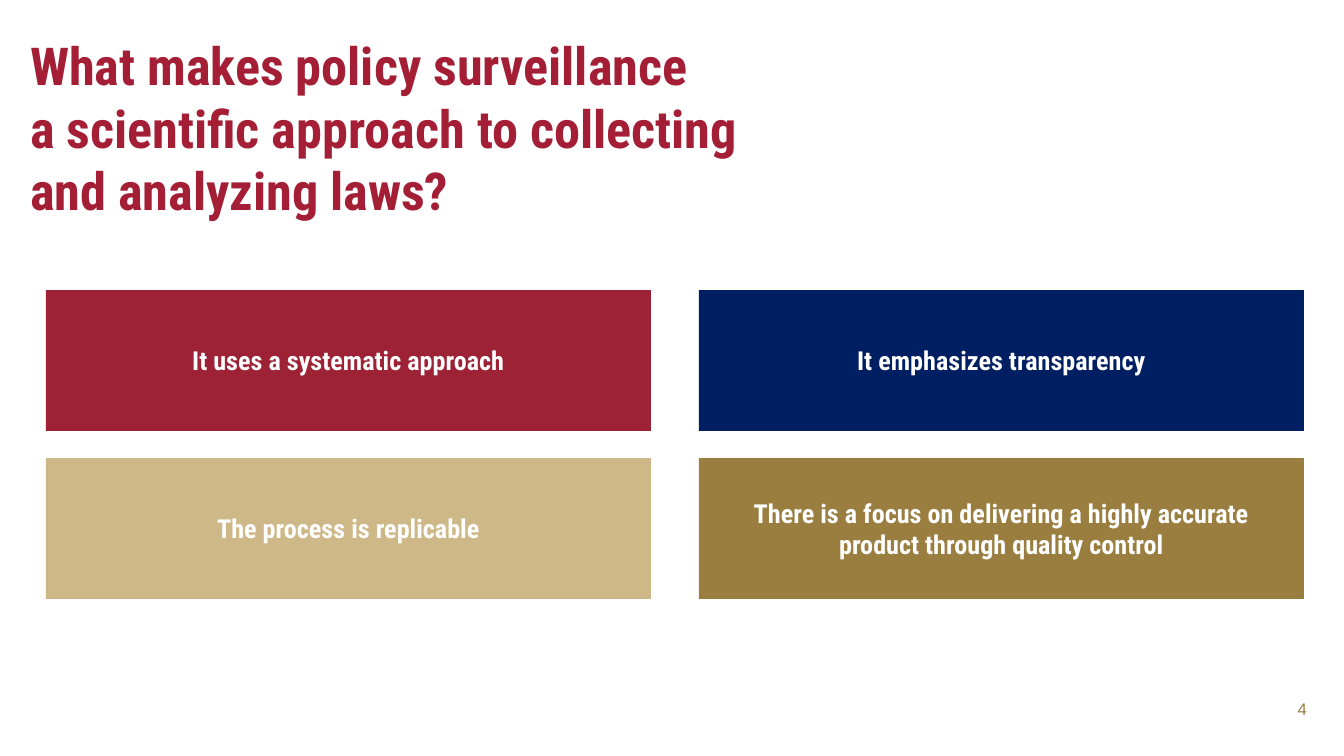
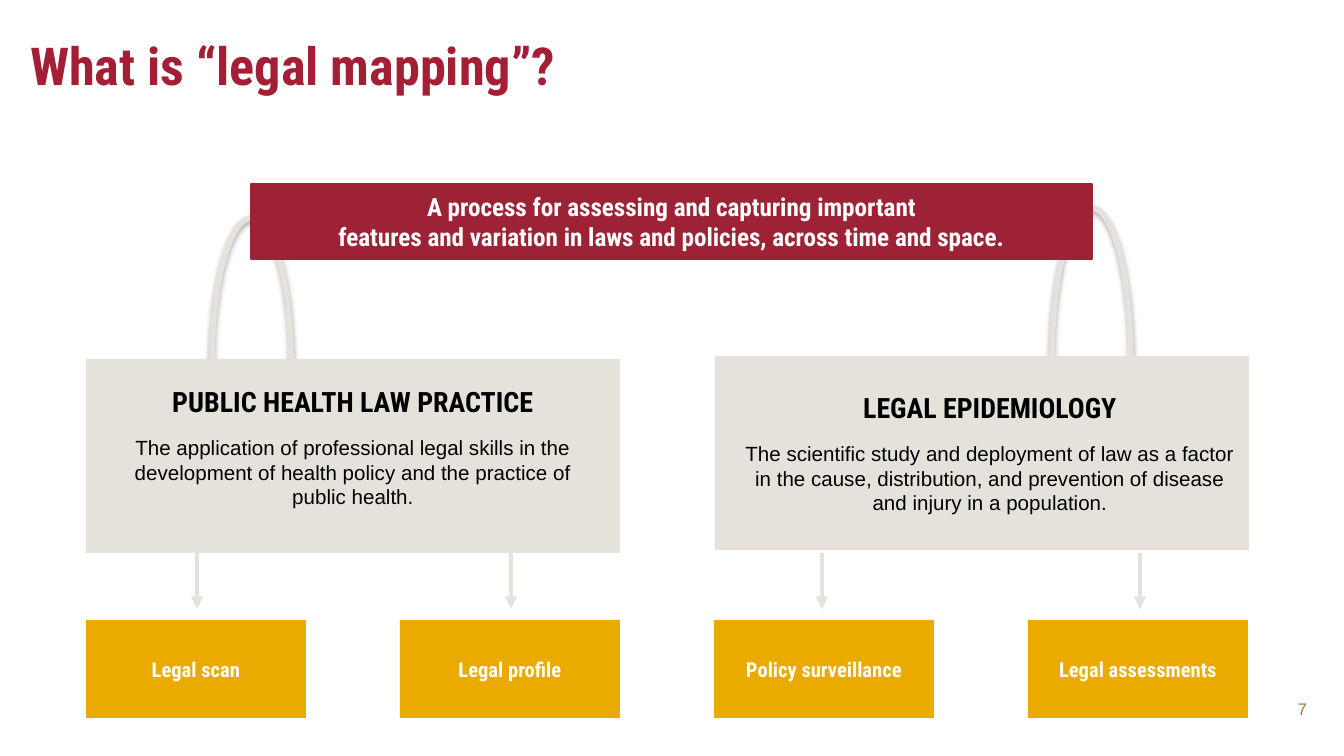
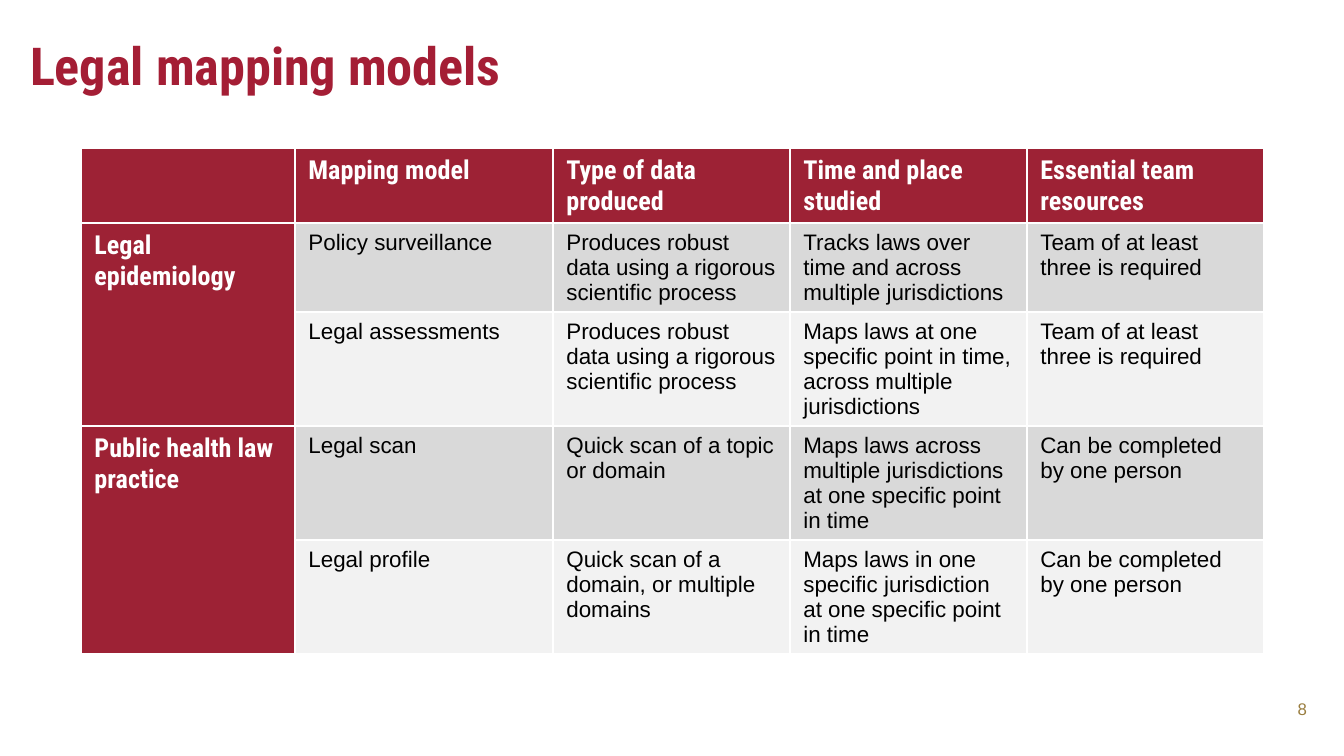
from copy import deepcopy

from pptx import Presentation
from pptx import util as u
from pptx.dml.color import RGBColor
from pptx.enum import shapes, text
from pptx.oxml import parse_xml
from pptx.oxml.ns import nsdecls, qn

PX = 914400 / 134.4
SLIDE_W, SLIDE_H = 1344, 756

WHITE = RGBColor(0xFF, 0xFF, 0xFF)
BLACK = RGBColor(0x00, 0x00, 0x00)
TITLE_RED = RGBColor(0xA4, 0x1E, 0x35)
CRIMSON = RGBColor(0x9D, 0x22, 0x35)
NAVY = RGBColor(0x00, 0x1E, 0x62)
SAND = RGBColor(0xCE, 0xB8, 0x88)
BRONZE = RGBColor(0x9A, 0x7E, 0x40)
AMBER = RGBColor(0xEA, 0xAA, 0x00)
STONE = RGBColor(0xE4, 0xE2, 0xDB)
ROW_DARK = RGBColor(0xD9, 0xD9, 0xD9)
ROW_LIGHT = RGBColor(0xF2, 0xF2, 0xF2)

HEAD_FONT = "Roboto Condensed"
BODY_FONT = "Arial"
LEFT, CENTER, RIGHT = text.PP_ALIGN.LEFT, text.PP_ALIGN.CENTER, text.PP_ALIGN.RIGHT
TOP, MIDDLE = text.MSO_ANCHOR.TOP, text.MSO_ANCHOR.MIDDLE


def px(n):
    return u.Emu(round(n * PX))


def emu_box(box):
    return [px(n) for n in box]


def write(tf, words, size=14, font=HEAD_FONT, color=WHITE, bold=True,
          align=CENTER, before=0, first=True):
    p = tf.paragraphs[0] if first else tf.add_paragraph()
    p.text = words
    p.alignment = align
    if before:
        p.space_before = u.Pt(before)
    for r in p.runs:
        r.font.size = u.Pt(size)
        r.font.name = font
        r.font.bold = bold
        r.font.color.rgb = color
    for br in p._p.findall(qn("a:br")):
        br.insert(0, deepcopy(p.runs[0]._r.rPr))


def frame(tf, anchor=TOP, inset=None):
    tf.word_wrap = True
    tf.auto_size = text.MSO_AUTO_SIZE.NONE
    tf.vertical_anchor = anchor
    if inset is not None:
        tf.margin_left = tf.margin_right = px(inset)
        tf.margin_top = tf.margin_bottom = px(inset)
    return tf


def add_rect(s, box, fill, words="", size=14):
    sp = s.shapes.add_shape(shapes.MSO_SHAPE.RECTANGLE, *emu_box(box))
    sp.shadow.inherit = False
    sp.fill.solid()
    sp.fill.fore_color.rgb = fill
    sp.line.fill.background()
    frame(sp.text_frame, MIDDLE)
    if words:
        write(sp.text_frame, words, size=size)
    return sp


def add_textbox(s, box, anchor=TOP, inset=None):
    sp = s.shapes.add_textbox(*emu_box(box))
    return frame(sp.text_frame, anchor, inset)


def add_base(prs, title, number):
    s = prs.slides.add_slide(prs.slide_layouts[5])
    sp = s.shapes.title
    sp.left, sp.top, sp.width, sp.height = emu_box((17, 20, 1231, 85))
    write(frame(sp.text_frame, TOP, 13), title, size=28, color=TITLE_RED, align=LEFT)
    tf = add_textbox(s, (1261, 684, 59, 50), MIDDLE, 13)
    write(tf, str(number), size=9, font=BODY_FONT, color=BRONZE, bold=False, align=RIGHT)
    return s


def add_card_grid(s, box, cards, columns=2, gap_x=48, gap_y=27):
    x, y, w, h = box
    rows = len(cards) // columns
    card_w = (w - gap_x * (columns - 1)) // columns
    card_h = (h - gap_y * (rows - 1)) // rows
    for i, (words, fill) in enumerate(cards):
        row, col = divmod(i, columns)
        add_rect(s, (x + col * (card_w + gap_x), y + row * (card_h + gap_y),
                     card_w, card_h), fill, words)


def add_arc(s, box, flip=False):
    sp = s.shapes.add_shape(shapes.MSO_SHAPE.ARC, *emu_box(box))
    sp.adjustments[0] = 95.62
    sp.adjustments[1] = 0
    sp.fill.background()
    sp.line.color.rgb = STONE
    sp.line.width = u.Pt(3)
    sp.shadow.inherit = False
    spPr = sp.element.spPr
    if flip:
        spPr.find(qn("a:xfrm")).set("flipH", "1")
    spPr.find(qn("a:effectLst")).append(parse_xml(
        f'<a:outerShdw {nsdecls("a")} blurRad="39370" dist="22860" dir="5400000" '
        'rotWithShape="0"><a:srgbClr val="000000"><a:alpha val="35000"/>'
        '</a:srgbClr></a:outerShdw>'))


def add_banner(s, box, lines):
    sp = add_rect(s, box, CRIMSON)
    sp.line.color.rgb = CRIMSON
    sp.line.width = u.Pt(1.25)
    for i, line in enumerate(lines):
        write(sp.text_frame, line, size=13.5, first=i == 0)


def add_panel(s, box, heading, body, dx, dy):
    x, y, w, h = box
    add_rect(s, box, STONE)
    tf = add_textbox(s, (x + dx, y + dy, w, h - dy))
    write(tf, heading, size=15, color=BLACK)
    write(tf, body, size=11, font=BODY_FONT, color=BLACK, bold=False,
          before=9, first=False)


def add_arrow(s, x, top, bottom):
    c = s.shapes.add_connector(shapes.MSO_CONNECTOR.STRAIGHT,
                               px(x), px(top), px(x), px(bottom))
    c.line.color.rgb = STONE
    c.line.width = u.Pt(2.25)
    c.line._get_or_add_ln().append(
        parse_xml(f'<a:tailEnd {nsdecls("a")} type="triangle"/>'))
    c._element.spPr.append(parse_xml(f'<a:effectLst {nsdecls("a")}/>'))


def add_method_row(s, box, methods, arrow_xs, method_w=220):
    x, y, w, h = box
    pitch = (w - method_w) / (len(methods) - 1)
    for i, (words, arrow_x) in enumerate(zip(methods, arrow_xs)):
        add_rect(s, (round(x + i * pitch), y, method_w, h), AMBER, words, size=11)
        add_arrow(s, arrow_x, y - 67, y - 11)


def style_cell(cell, fill):
    tcPr = cell._tc.get_or_add_tcPr()
    for side in ("lnL", "lnR", "lnT", "lnB"):
        tcPr.append(parse_xml(
            f'<a:{side} {nsdecls("a")} w="12700"><a:solidFill>'
            f'<a:srgbClr val="{WHITE}"/></a:solidFill></a:{side}>'))
    cell.fill.solid()
    cell.fill.fore_color.rgb = fill


def add_model_table(s, origin, col_widths, row_heights, rows):
    box = (*origin, sum(col_widths), sum(row_heights))
    table = s.shapes.add_table(len(rows), len(col_widths), *emu_box(box)).table
    table.first_row = table.horz_banding = False
    for column, w in zip(table.columns, col_widths):
        column.width = px(w)
    for row, h in zip(table.rows, row_heights):
        row.height = px(h)
    for i, row in enumerate(rows):
        for j, words in enumerate(row):
            cell = table.cell(i, j)
            header = i == 0 or j == 0
            style_cell(cell, CRIMSON if header else ROW_DARK if i % 2 else ROW_LIGHT)
            if not words:
                continue
            if header:
                write(cell.text_frame, words, align=LEFT)
            else:
                write(cell.text_frame, words, size=12, font=BODY_FONT,
                      color=BLACK, bold=False, align=LEFT)
    for i in range(1, len(rows), 2):
        table.cell(i, 0).merge(table.cell(i + 1, 0))


def build_approach(prs):
    s = add_base(prs, "What makes policy surveillance\va scientific approach to "
                 "collecting\vand analyzing laws?", 4)
    add_card_grid(s, (46, 290, 1258, 309), [
        ("It uses a systematic approach", CRIMSON),
        ("It emphasizes transparency", NAVY),
        ("The process is replicable", SAND),
        ("There is a focus on delivering a highly accurate product "
         "through quality control", BRONZE),
    ])


def build_mapping(prs):
    s = add_base(prs, "What is “legal mapping”?", 7)
    add_arc(s, (1052, 208, 79, 304))
    add_arc(s, (212, 218, 79, 289), flip=True)
    add_panel(s, (86, 359, 534, 194), "PUBLIC HEALTH LAW PRACTICE",
              "The application of professional legal skills in the development of "
              "health policy and the practice of\vpublic health.", 0, 19)
    add_panel(s, (715, 356, 534, 194), "LEGAL EPIDEMIOLOGY",
              "The scientific study and deployment of law as a factor in the cause, "
              "distribution, and prevention of disease and injury in a population.", 8, 28)
    add_banner(s, (251, 184, 841, 75), [
        "A process for assessing and capturing important",
        "features and variation in laws and policies, across time and space."])
    add_method_row(s, (86, 620, 1162, 98),
                   ["Legal scan", "Legal profile", "Policy surveillance",
                    "Legal assessments"], [197, 511, 822, 1140])


def build_models(prs):
    s = add_base(prs, "Legal mapping models", 8)
    robust = "Produces robust data using a rigorous scientific process"
    team = "Team of at least three is required"
    solo = "Can be completed by one person"
    add_model_table(s, (81, 148), [214, 258, 237, 237, 237], [74, 89, 114, 114, 114], [
        ["", "Mapping model", "Type of data produced", "Time and place studied",
         "Essential team resources"],
        ["Legal epidemiology", "Policy surveillance", robust,
         "Tracks laws over time and across multiple jurisdictions", team],
        ["", "Legal assessments", robust,
         "Maps laws at one specific point in time, across multiple jurisdictions", team],
        ["Public health law practice", "Legal scan", "Quick scan of a topic or domain",
         "Maps laws across multiple jurisdictions at one specific point in time", solo],
        ["", "Legal profile", "Quick scan of a domain, or multiple domains",
         "Maps laws in one specific jurisdiction at one specific point in time", solo],
    ])


def main():
    prs = Presentation()
    prs.slide_width, prs.slide_height = px(SLIDE_W), px(SLIDE_H)
    build_approach(prs)
    build_mapping(prs)
    build_models(prs)
    prs.save("out.pptx")


if __name__ == "__main__":
    main()
